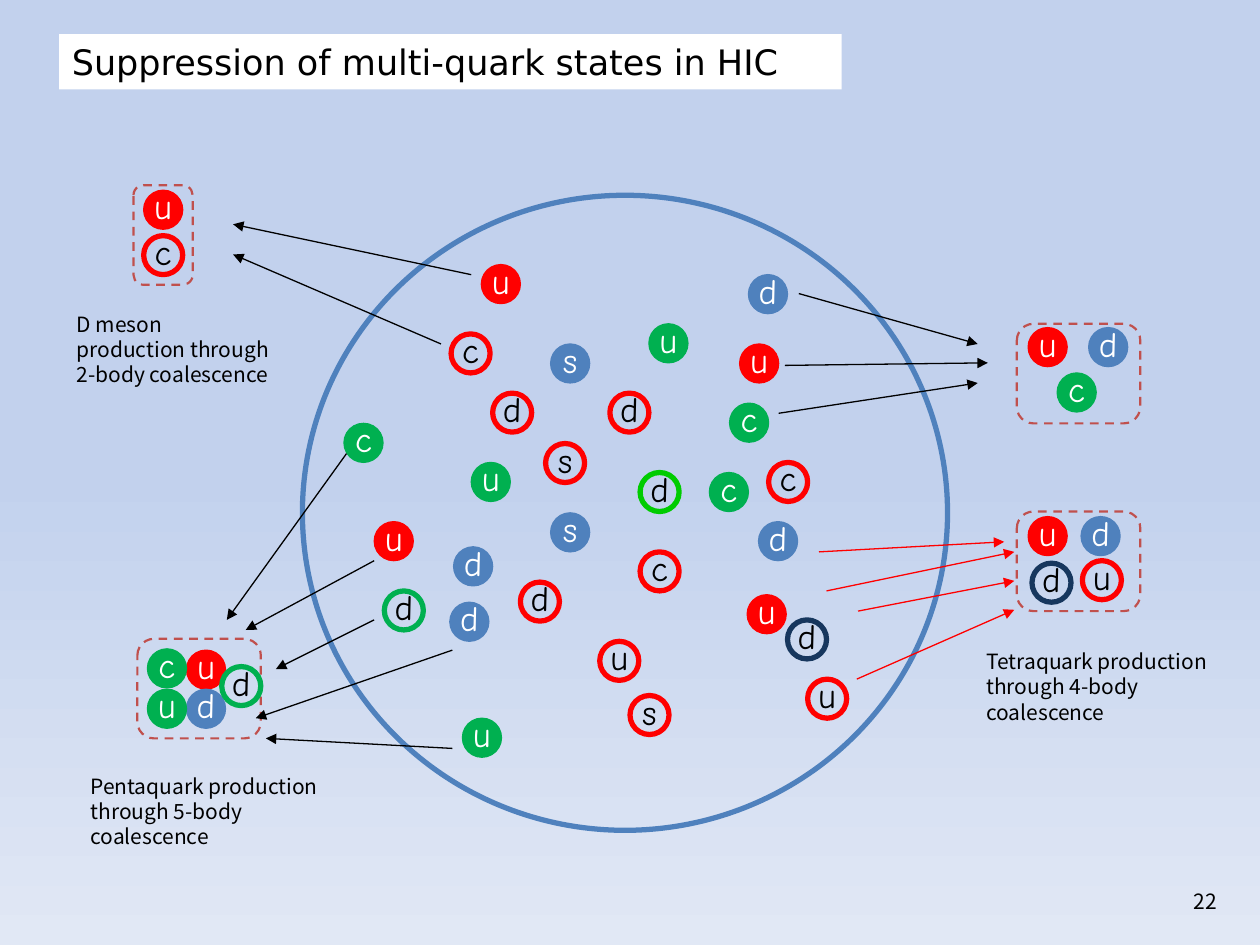
from typing import NamedTuple

from lxml.etree import SubElement
from pptx import Presentation
from pptx.dml.color import RGBColor
from pptx.enum.dml import MSO_LINE
from pptx.enum.shapes import MSO_CONNECTOR, MSO_SHAPE
from pptx.enum.text import MSO_ANCHOR, MSO_AUTO_SIZE, PP_ALIGN
from pptx.oxml.ns import qn
from pptx.util import Inches, Pt

BLACK, WHITE = "000000", "FFFFFF"
RED, BLUE, GREEN = "FF0000", "4F81BD", "00B050"
LIME, NAVY, BRICK = "00CC00", "17375E", "C0504D"
QUARK_SIZE = 0.31
BODY_FONT = "Noto Sans CJK KR"


class Quark(NamedTuple):
    flavour: str
    left: float
    top: float
    colour: str
    anti: bool = False  # antiquarks are open rings


class Hadron(NamedTuple):
    box: tuple
    quarks: list
    caption: str = ""
    caption_box: tuple = ()


class Arrow(NamedTuple):
    start: tuple
    end: tuple
    colour: str = BLACK


FIREBALL_BOX = (2.4, 1.55, 5.12, 5.04)

FIREBALL_QUARKS = [
    Quark("d", 4.84, 3.12, RED, True),
    Quark("u", 3.82, 2.1, RED),
    Quark("d", 5.94, 2.18, BLUE),
    Quark("u", 6.41, 5.39, RED, True),
    Quark("u", 5.15, 2.57, GREEN),
    Quark("s", 4.37, 2.73, BLUE),
    Quark("d", 5.08, 3.75, LIME, True),
    Quark("s", 4.33, 3.52, RED, True),
    Quark("c", 5.08, 4.38, RED, True),
    Quark("c", 3.58, 2.65, RED, True),
    Quark("d", 4.13, 4.62, RED, True),
    Quark("u", 5.87, 2.73, RED),
    Quark("d", 3.6, 4.34, BLUE),
    Quark("u", 4.76, 5.09, RED, True),
    Quark("u", 3.74, 3.67, GREEN),
    Quark("s", 4.37, 4.07, BLUE),
    Quark("d", 6.25, 4.92, NAVY, True),
    Quark("s", 5, 5.52, RED, True),
    Quark("c", 6.1, 3.67, RED, True),
    Quark("d", 6.02, 4.14, BLUE),
    Quark("u", 5.93, 4.72, RED),
    Quark("d", 3.57, 4.78, BLUE),
    Quark("u", 2.97, 4.14, RED),
    Quark("c", 5.79, 3.2, GREEN),
    Quark("c", 5.63, 3.75, GREEN),
    Quark("d", 3.05, 4.69, GREEN, True),
    Quark("d", 3.91, 3.12, RED, True),
    Quark("c", 2.73, 3.36, GREEN),
    Quark("u", 3.67, 5.7, GREEN),
]

HADRONS = [
    Hadron((1.06, 1.47, 0.47, 0.79),
           [Quark("c", 1.14, 1.87, RED, True), Quark("u", 1.14, 1.51, RED)],
           "D meson production through 2-body coalescence", (0.51, 2.42, 1.73, 0.9)),
    Hadron((8.07, 2.57, 0.98, 0.79),
           [Quark("u", 8.16, 2.6, RED), Quark("d", 8.64, 2.6, BLUE),
            Quark("c", 8.39, 2.96, GREEN)]),
    Hadron((8.07, 4.06, 0.98, 0.79),
           [Quark("u", 8.16, 4.1, RED), Quark("d", 8.58, 4.1, BLUE),
            Quark("u", 8.59, 4.45, RED, True), Quark("d", 8.19, 4.47, NAVY, True)],
           "Tetraquark production through 4-body coalescence", (7.73, 5.1, 1.99, 0.71)),
    Hadron((1.09, 5.07, 0.98, 0.79),
           [Quark("u", 1.48, 5.16, RED), Quark("d", 1.48, 5.47, BLUE),
            Quark("c", 1.17, 5.15, GREEN), Quark("u", 1.17, 5.47, GREEN),
            Quark("d", 1.76, 5.29, GREEN, True)],
           "Pentaquark production through 5-body coalescence", (0.62, 6.09, 2.03, 0.71)),
]

ARROWS = [
    Arrow((3.74, 2.18), (1.85, 1.78)),
    Arrow((3.5, 2.73), (1.85, 2.02)),
    Arrow((6.34, 2.33), (7.76, 2.73)),
    Arrow((6.23, 2.9), (7.84, 2.88)),
    Arrow((6.18, 3.28), (7.76, 3.04)),
    Arrow((6.5, 4.38), (7.97, 4.3), RED),
    Arrow((6.56, 4.69), (8.05, 4.38), RED),
    Arrow((6.81, 4.85), (8.05, 4.61), RED),
    Arrow((6.8, 5.39), (8.05, 4.84), RED),
    Arrow((2.75, 3.6), (1.8, 4.92)),
    Arrow((2.97, 4.45), (1.95, 5)),
    Arrow((2.97, 4.92), (2.19, 5.31)),
    Arrow((3.59, 5.16), (2.03, 5.7)),
    Arrow((3.59, 5.94), (2.11, 5.86)),
]


def paint(color_format, colour: str) -> None:
    color_format.rgb = RGBColor.from_string(colour)


def write(shape, text: str, *, size=12, font=BODY_FONT, colour=BLACK, align=PP_ALIGN.LEFT,
          anchor=MSO_ANCHOR.TOP, wrap=True, margin=None, spacing=None) -> None:
    frame = shape.text_frame
    frame.auto_size = MSO_AUTO_SIZE.NONE
    frame.word_wrap = wrap
    frame.vertical_anchor = anchor
    if margin is not None:
        frame.margin_left = frame.margin_right = Inches(margin)
        frame.margin_top = frame.margin_bottom = Inches(margin)
    paragraph = frame.paragraphs[0]
    paragraph.alignment = align
    paragraph.line_spacing = spacing
    run = paragraph.add_run()
    run.text = text
    run.font.size = Pt(size)
    run.font.name = font
    paint(run.font.color, colour)
    # East Asian typeface must match for the CJK family to be used throughout
    SubElement(run.font._element, qn("a:ea"), typeface=font)


def draw_outline(slide, kind: MSO_SHAPE, box: tuple, colour: str, width: float):
    shape = slide.shapes.add_shape(kind, *map(Inches, box))
    shape.shadow.inherit = False
    shape.fill.background()
    paint(shape.line.color, colour)
    shape.line.width = Pt(width)
    return shape


def draw_quark(slide, quark: Quark) -> None:
    box = (quark.left, quark.top, QUARK_SIZE, QUARK_SIZE)
    ball = draw_outline(slide, MSO_SHAPE.OVAL, box, quark.colour, 3 if quark.anti else 0.75)
    if not quark.anti:
        ball.fill.solid()
        paint(ball.fill.fore_color, quark.colour)
    write(ball, quark.flavour, size=20, font="Comic Neue",
          colour=BLACK if quark.anti else WHITE, align=PP_ALIGN.CENTER,
          anchor=MSO_ANCHOR.MIDDLE, wrap=False, margin=0, spacing=0.8)


def draw_hadron(slide, hadron: Hadron) -> None:
    frame = draw_outline(slide, MSO_SHAPE.ROUNDED_RECTANGLE, hadron.box, BRICK, 1.25)
    frame.line.dash_style = MSO_LINE.DASH
    for quark in hadron.quarks:
        draw_quark(slide, quark)
    if hadron.caption:
        write(slide.shapes.add_textbox(*map(Inches, hadron.caption_box)), hadron.caption)


def draw_arrow(slide, arrow: Arrow) -> None:
    line = slide.shapes.add_connector(
        MSO_CONNECTOR.STRAIGHT, *map(Inches, arrow.start + arrow.end))
    paint(line.line.color, arrow.colour)
    line.line.width = Pt(0.75)
    SubElement(line.line._get_or_add_ln(), qn("a:tailEnd"), type="triangle")
    SubElement(line._element.spPr, qn("a:effectLst"))


def set_background(slide) -> None:
    fill = slide.background.fill
    fill.gradient()
    fill.gradient_angle = 270
    for stop, (position, colour) in zip(fill.gradient_stops, [(0.5, "C2D1ED"), (1, "E1E8F5")]):
        stop.position = position
        paint(stop.color, colour)


def set_title(slide, text: str) -> None:
    title = slide.shapes.title
    title.left, title.top, title.width, title.height = map(Inches, (0.47, 0.27, 6.21, 0.44))
    title.fill.solid()
    paint(title.fill.fore_color, WHITE)
    write(title, text, size=20, font="DejaVu Sans")


def main() -> None:
    deck = Presentation()
    deck.slide_width, deck.slide_height = Inches(10), Inches(7.5)
    slide = deck.slides.add_slide(deck.slide_layouts[5])
    set_background(slide)
    set_title(slide, "Suppression of multi-quark states in HIC")
    draw_outline(slide, MSO_SHAPE.OVAL, FIREBALL_BOX, BLUE, 3)
    for quark in FIREBALL_QUARKS:
        draw_quark(slide, quark)
    for hadron in HADRONS:
        draw_hadron(slide, hadron)
    for arrow in ARROWS:
        draw_arrow(slide, arrow)
    page_number = slide.shapes.add_textbox(*map(Inches, (7.43, 6.95, 2.33, 0.4)))
    write(page_number, "22", align=PP_ALIGN.RIGHT, anchor=MSO_ANCHOR.MIDDLE)
    deck.save("out.pptx")


if __name__ == "__main__":
    main()
